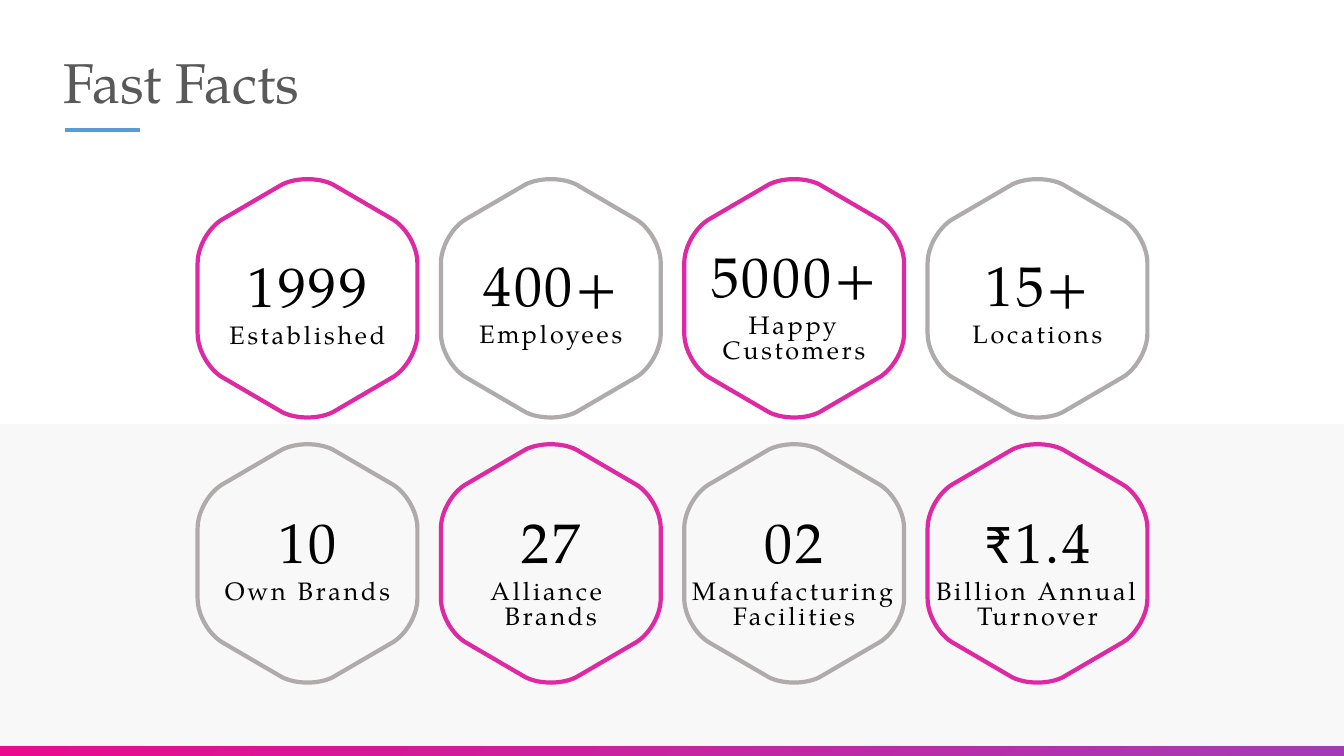
from dataclasses import dataclass

from pptx import Presentation
from pptx.dml.color import RGBColor
from pptx.enum.dml import MSO_PATTERN
from pptx.enum.shapes import MSO_CONNECTOR, MSO_SHAPE
from pptx.enum.text import MSO_ANCHOR, MSO_AUTO_SIZE, PP_ALIGN
from pptx.oxml.ns import qn
from pptx.util import Inches, Pt

RECTANGLE = MSO_SHAPE.RECTANGLE
STRAIGHT = MSO_CONNECTOR.STRAIGHT
DARK_HORIZONTAL = MSO_PATTERN.DARK_HORIZONTAL
MIDDLE, TOP = MSO_ANCHOR.MIDDLE, MSO_ANCHOR.TOP
FIT_SHAPE, NO_FIT = MSO_AUTO_SIZE.SHAPE_TO_FIT_TEXT, MSO_AUTO_SIZE.NONE
CENTER, LEFT = PP_ALIGN.CENTER, PP_ALIGN.LEFT


@dataclass(frozen=True)
class Theme:
    font: str = "TeX Gyre Pagella"
    rupee_font: str = "Calibri"
    title_size: int = 40
    figure_size: int = 40
    label_size: int = 18
    title: RGBColor = RGBColor(0x59, 0x59, 0x59)
    text: RGBColor = RGBColor(0, 0, 0)
    white: RGBColor = RGBColor(0xFF, 0xFF, 0xFF)
    band: RGBColor = RGBColor(0xF8, 0xF8, 0xF8)
    pink: RGBColor = RGBColor(0xDF, 0x28, 0xA4)
    grey: RGBColor = RGBColor(0xAF, 0xAB, 0xAB)
    accent: RGBColor = RGBColor(0x5B, 0x9B, 0xD5)
    footer_start: RGBColor = RGBColor(0xEB, 0x0A, 0x8D)
    footer_end: RGBColor = RGBColor(0xA3, 0x3C, 0xB4)


THEME = Theme()
SLIDE_WIDTH, SLIDE_HEIGHT = 13.33, 7.5
HEX_WIDTH, HEX_HEIGHT = 2.18, 2.36
GRID_LEFT, GRID_RIGHT, GRID_TOP = 1.96, 11.38, 1.78
COLUMN_PITCH = (GRID_RIGHT - GRID_LEFT - HEX_WIDTH) / 3
ROW_PITCH = 2.63
FIGURE_HEIGHT, LABEL_LINE_HEIGHT, LABEL_DROP = 0.54, 0.24, 0.61

# Left-top, top and right-top corners, each as four Bezier points
UPPER_CORNERS = [
    [(0, 0.83), (0, 0.67), (0.11, 0.48), (0.24, 0.4)],
    [(0.84, 0.05), (0.98, -0.02), (1.2, -0.02), (1.34, 0.05)],
    [(1.94, 0.4), (2.07, 0.48), (2.18, 0.67), (2.18, 0.83)],
]

# Each fact: figure, label paragraphs, label line count, top of the figure
FACT_ROWS = [
    [
        ("1999", ["Established"], 1, 2.62),
        ("400+", ["Employees"], 1, 2.61),
        ("5000+", ["Happy Customers"], 2, 2.52),
        ("15+", ["Locations"], 1, 2.61),
    ],
    [
        ("10", ["Own Brands"], 1, 5.16),
        ("27", ["Alliance ", "Brands"], 2, 5.16),
        ("02", ["Manufacturing Facilities"], 2, 5.16),
        ("₹1.4", ["Billion Annual Turnover"], 2, 5.16),
    ],
]


def apply_format(target, values):
    for attribute, value in values.items():
        setattr(target, attribute, value)


def add_rectangle(slide, top, height):
    """Add a borderless rectangle across the full slide width."""
    rectangle = slide.shapes.add_shape(
        RECTANGLE, 0, Inches(top), Inches(SLIDE_WIDTH), Inches(height))
    rectangle.shadow.inherit = False
    rectangle.line.fill.background()
    return rectangle


def add_footer(slide):
    fill = add_rectangle(slide, 7.37, 0.13).fill
    fill.gradient()
    fill.gradient_angle = 315
    for stop, color in zip(fill.gradient_stops, (THEME.footer_start, THEME.footer_end)):
        stop.color.rgb = color


def add_band(slide):
    fill = add_rectangle(slide, 4.2, 3.19).fill
    fill.patterned()
    fill.pattern = DARK_HORIZONTAL
    fill.fore_color.rgb = THEME.band
    fill.back_color.rgb = THEME.white


def add_title(slide, text):
    title = slide.shapes.title
    apply_format(title, {"left": Inches(0.53), "top": Inches(0.49),
                         "width": Inches(4.2), "height": Inches(0.71)})
    frame = title.text_frame
    frame.text = text
    apply_format(frame, {"vertical_anchor": MIDDLE, "auto_size": NO_FIT})
    apply_format(frame.paragraphs[0], {"alignment": LEFT, "line_spacing": 0.9})
    font = frame.paragraphs[0].runs[0].font
    apply_format(font, {"name": THEME.font, "size": Pt(THEME.title_size)})
    font.color.rgb = THEME.title


def add_title_rule(slide):
    rule = slide.shapes.add_connector(
        STRAIGHT, Inches(0.64), Inches(1.29), Inches(1.39), Inches(1.29))
    rule.line.color.rgb = THEME.accent
    rule.line.width = Pt(2.25)
    properties = rule._element.spPr
    properties.append(properties.makeelement(qn("a:effectLst"), {}))


def hexagon_corners():
    """Give the upper corners, then the same corners turned by half a circle."""
    lower = [[(HEX_WIDTH - x, HEX_HEIGHT - y) for x, y in corner]
             for corner in UPPER_CORNERS]
    return UPPER_CORNERS + lower


def add_path_step(path, tag, points=()):
    step = path.makeelement(qn(tag), {})
    path.append(step)
    for x, y in points:
        position = {"x": str(Inches(x)), "y": str(Inches(y))}
        step.append(step.makeelement(qn("a:pt"), position))


def draw_rounded_path(path):
    """Replace the straight segments with lines joined by Bezier corners."""
    for segment in list(path):
        path.remove(segment)
    path.set("w", str(Inches(HEX_WIDTH)))
    path.set("h", str(Inches(HEX_HEIGHT)))
    for index, (start, *curve) in enumerate(hexagon_corners()):
        add_path_step(path, "a:lnTo" if index else "a:moveTo", [start])
        add_path_step(path, "a:cubicBezTo", curve)
    add_path_step(path, "a:close")


def add_hexagon(slide, left, top, color):
    vertices = [(Inches(left + corner[0][0]), Inches(top + corner[0][1]))
                for corner in hexagon_corners()]
    builder = slide.shapes.build_freeform(*vertices[0])
    builder.add_line_segments(vertices[1:], close=True)
    hexagon = builder.convert_to_shape()
    draw_rounded_path(next(hexagon._element.iter(qn("a:path"))))
    apply_format(hexagon, {"left": Inches(left), "top": Inches(top),
                           "width": Inches(HEX_WIDTH), "height": Inches(HEX_HEIGHT)})
    hexagon.shadow.inherit = False
    hexagon.fill.background()
    hexagon.line.color.rgb = color
    hexagon.line.width = Pt(3)


def add_run(paragraph, text, font_name, size):
    run = paragraph.add_run()
    run.text = text
    apply_format(run.font, {"name": font_name, "size": Pt(size)})
    run.font.color.rgb = THEME.text
    run._r.get_or_add_rPr().set("spc", "200")


def add_centred_text(slide, left, top, height, lines, size):
    box = slide.shapes.add_textbox(
        Inches(left), Inches(top), Inches(HEX_WIDTH), Inches(height))
    frame = box.text_frame
    apply_format(frame, {"word_wrap": True, "auto_size": FIT_SHAPE,
                         "vertical_anchor": TOP, "margin_left": 0,
                         "margin_right": 0, "margin_top": 0, "margin_bottom": 0})
    for index, line in enumerate(lines):
        paragraph = frame.add_paragraph() if index else frame.paragraphs[0]
        apply_format(paragraph, {"alignment": CENTER, "line_spacing": 0.8})
        if line.startswith("₹"):
            add_run(paragraph, "₹", THEME.rupee_font, size)
        add_run(paragraph, line.removeprefix("₹"), THEME.font, size)


def add_fact_text(slide, left, fact):
    figure, label, line_count, top = fact
    add_centred_text(slide, left, top, FIGURE_HEIGHT, [figure], THEME.figure_size)
    add_centred_text(slide, left, top + LABEL_DROP, line_count * LABEL_LINE_HEIGHT,
                     label, THEME.label_size)


def main():
    presentation = Presentation()
    presentation.slide_width = Inches(SLIDE_WIDTH)
    presentation.slide_height = Inches(SLIDE_HEIGHT)
    title_only = presentation.slide_layouts[5]
    slide = presentation.slides.add_slide(title_only)

    add_footer(slide)
    add_band(slide)
    add_title(slide, "Fast Facts")
    for row, facts in enumerate(FACT_ROWS):
        for column, fact in enumerate(facts):
            left = GRID_LEFT + column * COLUMN_PITCH
            color = THEME.grey if (row + column) % 2 else THEME.pink
            add_hexagon(slide, left, GRID_TOP + row * ROW_PITCH, color)
            add_fact_text(slide, left, fact)
    add_title_rule(slide)
    presentation.save("out.pptx")


if __name__ == "__main__":
    main()
